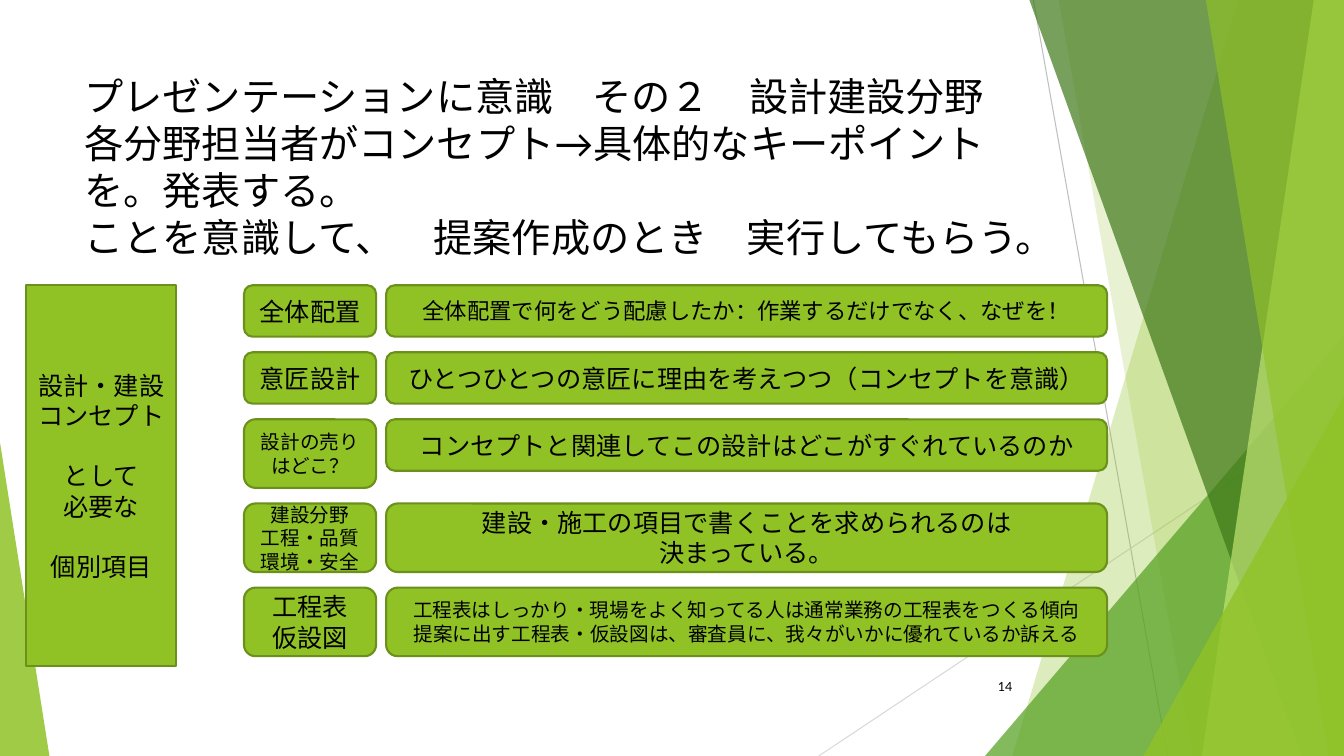
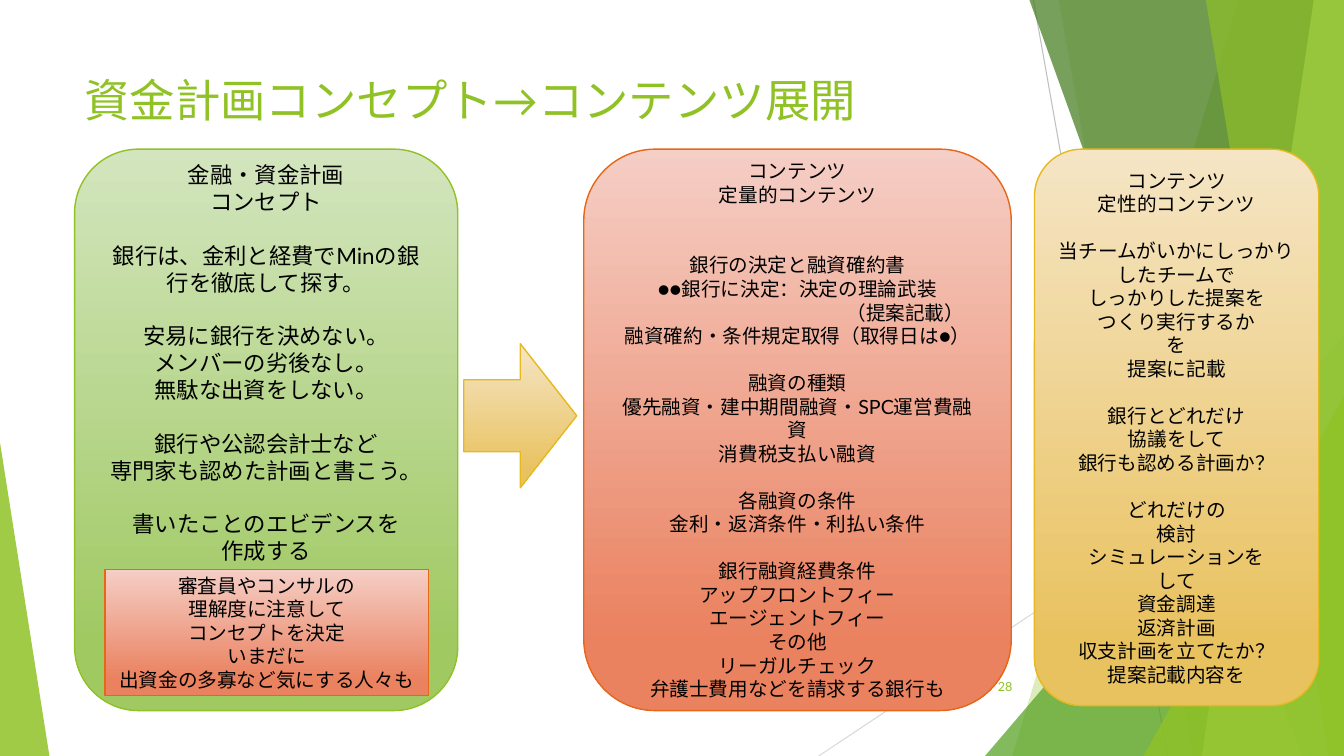
from dataclasses import dataclass

from lxml.etree import SubElement
from pptx import Presentation
from pptx.dml.color import RGBColor
from pptx.enum.shapes import MSO_CONNECTOR, MSO_SHAPE as Preset
from pptx.enum.text import MSO_ANCHOR as Anchor, PP_ALIGN as Align
from pptx.oxml.ns import qn
from pptx.util import Inches, Pt

WIDTH, HEIGHT = 13.33, 7.5
FONT = "Lato"
LINE_HEIGHT = 1.2
COLORS = {
    "text": "000000",
    "green": "90C226",
    "mid_green": "54A021",
    "dark_green": "3F7819",
    "pale_green": "C0E474",
    "box_edge": "6B901C",
    "ray": "BFBFBF",
    "pale_ray": "D9D9D9",
    "orange": "E76618",
    "gold": "E6B91E",
    "green_top": "D3E5BE",
    "green_bottom": "A0C962",
    "orange_top": "F5CEC5",
    "orange_bottom": "EA815F",
    "gold_top": "F5E5C5",
    "gold_bottom": "E9C260",
}


@dataclass(frozen=True)
class Box:
    left: float
    top: float
    width: float
    height: float

    def emu(self) -> tuple:
        return tuple(Inches(v) for v in (self.left, self.top, self.width, self.height))


@dataclass(frozen=True)
class Ray:
    start: tuple[float, float]
    end: tuple[float, float]
    color: str


@dataclass(frozen=True)
class Facet:
    """Band running from the slide's right edge to a slanted left edge."""
    top_x: float
    bottom_x: float
    color: str
    opacity: int


@dataclass(frozen=True)
class Wedge:
    box: Box
    apex: float
    color: str
    opacity: int


@dataclass(frozen=True)
class Topic:
    label: str
    label_size: int
    detail: str
    detail_size: int
    label_height: float
    detail_height: float


@dataclass(frozen=True)
class Panel:
    box: Box
    hue: str
    text: str = ""
    size: int = 14
    preset: Preset = Preset.ROUNDED_RECTANGLE
    bottom_inset: float = 0.05


RAYS = (
    Ray((10.25, 0), (11.58, HEIGHT), "ray"),
    Ray((WIDTH, 4.03), (8.12, HEIGHT), "pale_ray"),
)
BACKDROP = (
    Facet(12.28, 10.04, "green", 30),
    Facet(10.5, 11.83, "green", 20),
    Wedge(Box(9.77, 3.33, 3.56, 4.17), 1, "mid_green", 72),
    Facet(10.21, 12.91, "dark_green", 70),
    Facet(13.03, 11.92, "pale_green", 70),
    Facet(11.96, 13.18, "green", 65),
    Wedge(Box(11.34, 3.93, 1.99, 3.57), 1, "green", 80),
    Wedge(Box(0, 4.39, 0.49, 3.11), 0, "green", 85),
)

DESIGN_TITLE = """プレゼンテーションに意識　その２　設計建設分野
各分野担当者がコンセプト→具体的なキーポイント
を。発表する。
ことを意識して、　提案作成のとき　実行してもらう。"""
DESIGN_CONCEPT = "設計・建設\nコンセプト\n\nとして\n必要な\n\n個別項目"
TOPICS = (
    Topic("全体配置", 18, "全体配置で何をどう配慮したか：作業するだけでなく、なぜを！", 16, 0.51, 0.51),
    Topic("意匠設計", 18, "ひとつひとつの意匠に理由を考えつつ（コンセプトを意識）", 18, 0.51, 0.51),
    Topic("設計の売り\nはどこ？", 14,
          "コンセプトと関連してこの設計はどこがすぐれているのか", 18, 0.68, 0.51),
    Topic("建設分野\n工程・品質\n環境・安全", 14,
          "建設・施工の項目で書くことを求められるのは\n決まっている。", 18, 0.68, 0.68),
    Topic("工程表\n仮設図", 18,
          "工程表はしっかり・現場をよく知ってる人は通常業務の工程表をつくる傾向\n"
          "提案に出す工程表・仮設図は、審査員に、我々がいかに優れているか訴える", 14, 0.68, 0.68),
)

FUNDING_CONCEPT = """金融・資金計画
コンセプト

銀行は、金利と経費でMinの銀行を徹底して探す。

安易に銀行を決めない。
メンバーの劣後なし。
無駄な出資をしない。

銀行や公認会計士など
専門家も認めた計画と書こう。

書いたことのエビデンスを
作成する"""
REVIEWER_NOTE = """審査員やコンサルの
理解度に注意して
コンセプトを決定
いまだに
出資金の多寡など気にする人々も"""
PROPOSAL_MARK = "（提案記載）"
QUANTITATIVE = f"""コンテンツ
定量的コンテンツ


銀行の決定と融資確約書
●●銀行に決定：決定の理論武装
{PROPOSAL_MARK}
融資確約・条件規定取得（取得日は●）

融資の種類
優先融資・建中期間融資・SPC運営費融資
消費税支払い融資

各融資の条件
金利・返済条件・利払い条件

銀行融資経費条件
アップフロントフィー
エージェントフィー
その他
リーガルチェック
弁護士費用などを請求する銀行も"""
QUALITATIVE = """コンテンツ
定性的コンテンツ

当チームがいかにしっかりしたチームで
しっかりした提案を
つくり実行するか
を
提案に記載

銀行とどれだけ
協議をして
銀行も認める計画か？

どれだけの
検討
シミュレーションを
して
資金調達
返済計画
収支計画を立てたか？
提案記載内容を"""
PANELS = (
    Panel(Box(0.74, 1.48, 3.8, 5.57), "green", FUNDING_CONCEPT, 16, bottom_inset=1.38),
    Panel(Box(1.04, 5.65, 3.21, 1.25), "orange", REVIEWER_NOTE, preset=Preset.RECTANGLE),
    Panel(Box(4.6, 3.41, 1.12, 1.43), "gold", preset=Preset.RIGHT_ARROW),
    Panel(Box(5.79, 1.48, 4.24, 5.57), "orange", QUANTITATIVE),
    Panel(Box(10.26, 1.48, 2.82, 5.52), "gold", QUALITATIVE),
)


def rgb(name: str) -> RGBColor:
    return RGBColor.from_string(COLORS[name])


def write(shape, text: str, size: float, color: str = "text",
          align: Align = Align.CENTER, anchor: Anchor = Anchor.MIDDLE) -> None:
    """Write one paragraph a line; an empty line becomes space before the next."""
    frame = shape.text_frame
    frame.word_wrap = True
    frame.vertical_anchor = anchor
    gap, paragraph = 0, None
    for line in text.split("\n"):
        if not line:
            gap += 1
            continue
        paragraph = frame.add_paragraph() if paragraph else frame.paragraphs[0]
        paragraph.text = line
        paragraph.alignment = align
        paragraph.space_before = Pt(gap * size * LINE_HEIGHT)
        gap = 0
        for run in paragraph.runs:
            run.font.name = FONT
            run.font.size = Pt(size)
            run.font.color.rgb = rgb(color)
            SubElement(run.font._element, qn("a:ea")).set("typeface", FONT)


def draw_backdrop(slide) -> None:
    for ray in RAYS:
        line = slide.shapes.add_connector(
            MSO_CONNECTOR.STRAIGHT, *(Inches(v) for v in ray.start + ray.end))
        line.line.color.rgb = rgb(ray.color)
        line.line.width = Pt(0.75)
        SubElement(line._element.spPr, qn("a:effectLst"))
    for part in BACKDROP:
        if isinstance(part, Facet):
            outline = slide.shapes.build_freeform(Inches(part.top_x), 0)
            outline.add_line_segments([
                (Inches(x), Inches(y)) for x, y in
                ((WIDTH, 0), (WIDTH, HEIGHT), (part.bottom_x, HEIGHT))])
            shape = outline.convert_to_shape()
        else:
            shape = slide.shapes.add_shape(Preset.ISOSCELES_TRIANGLE, *part.box.emu())
            shape.adjustments[0] = part.apex
        shape.shadow.inherit = False
        shape.line.fill.background()
        shape.fill.solid()
        shape.fill.fore_color.rgb = rgb(part.color)
        tint = shape._element.spPr.find(qn("a:solidFill"))[0]
        SubElement(tint, qn("a:alpha")).set("val", str(part.opacity * 1000))


def start_slide(deck, title: str, title_box: Box, title_size: float,
                title_color: str, number: str, number_color: str):
    slide = deck.slides.add_slide(deck.slide_layouts[6])
    draw_backdrop(slide)
    heading = slide.shapes.add_textbox(*title_box.emu())
    write(heading, title, title_size, title_color, Align.LEFT, Anchor.TOP)
    page = slide.shapes.add_textbox(*Box(9.39, 6.61, 0.75, 0.4).emu())
    write(page, number, 9, number_color, Align.RIGHT)
    return slide


def add_green_box(slide, box: Box, text: str, size: int,
                  preset: Preset = Preset.ROUNDED_RECTANGLE) -> None:
    shape = slide.shapes.add_shape(preset, *box.emu())
    shape.shadow.inherit = False
    shape.fill.solid()
    shape.fill.fore_color.rgb = rgb("green")
    shape.line.color.rgb = rgb("box_edge")
    shape.line.width = Pt(1.5)
    write(shape, text, size)


def add_panel(slide, panel: Panel) -> None:
    shape = slide.shapes.add_shape(panel.preset, *panel.box.emu())
    shape.shadow.inherit = False
    shape.fill.gradient()
    shape.fill.gradient_angle = 270
    shades = (("top", 0), ("bottom", 0.88))
    for stop, (end, position) in zip(shape.fill.gradient_stops, shades):
        stop.color.rgb = rgb(f"{panel.hue}_{end}")
        stop.position = position
    shape.line.color.rgb = rgb(panel.hue)
    shape.line.width = Pt(1)
    if not panel.text:
        return
    write(shape, panel.text, panel.size)
    shape.text_frame.margin_bottom = Inches(panel.bottom_inset)
    for paragraph in shape.text_frame.paragraphs:
        if paragraph.text == PROPOSAL_MARK:
            paragraph._p.get_or_add_pPr().set("marL", str(Inches(2.14)))


def build_design_slide(deck) -> None:
    slide = start_slide(deck, DESIGN_TITLE, Box(0.74, 0.67, 9.77, 2.16), 28, "text",
                        "14", "text")
    top, gap = 2.83, 0.155
    add_green_box(slide, Box(0.26, top, 1.49, 3.78), DESIGN_CONCEPT, 18, Preset.RECTANGLE)
    for topic in TOPICS:
        add_green_box(slide, Box(2.42, top, 1.31, topic.label_height),
                      topic.label, topic.label_size)
        add_green_box(slide, Box(3.83, top, 7.15, topic.detail_height),
                      topic.detail, topic.detail_size)
        top += topic.label_height + gap


def build_funding_slide(deck) -> None:
    slide = start_slide(deck, "資金計画コンセプト→コンテンツ展開", Box(0.74, 0.67, 9.4, 0.58),
                        32.4, "green", "28", "green")
    for panel in PANELS:
        add_panel(slide, panel)


def main() -> None:
    deck = Presentation()
    deck.slide_width, deck.slide_height = Inches(WIDTH), Inches(HEIGHT)
    build_design_slide(deck)
    build_funding_slide(deck)
    deck.save("out.pptx")


if __name__ == "__main__":
    main()
